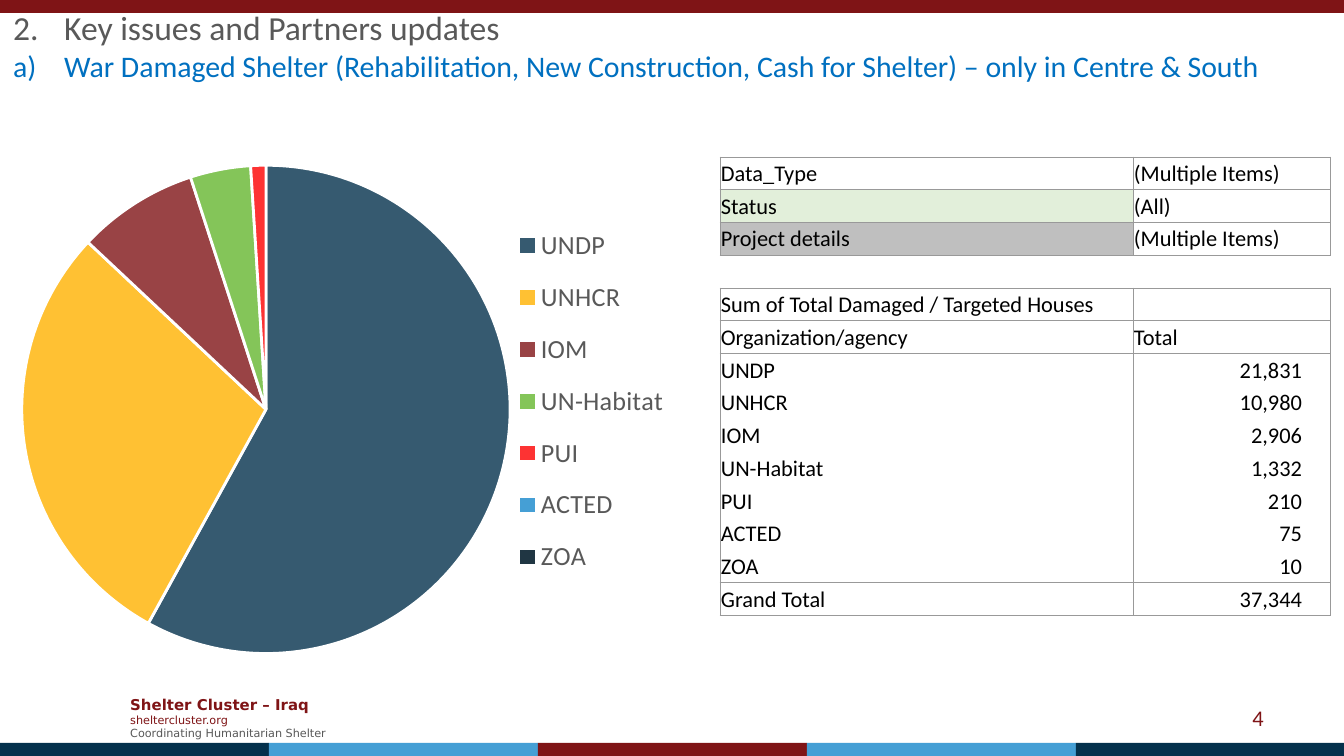
from lxml.etree import SubElement
from pptx import Presentation
from pptx.chart.data import CategoryChartData
from pptx.dml.color import RGBColor
from pptx.enum.chart import XL_CHART_TYPE as CT, XL_LEGEND_POSITION as LP
from pptx.enum.shapes import MSO_SHAPE as SHAPE
from pptx.enum.text import MSO_ANCHOR as ANCHOR, PP_ALIGN as ALIGN
from pptx.oxml import parse_xml
from pptx.oxml.ns import nsdecls, qn
from pptx.util import Pt

SCALE = 914400 / 134.4
MAROON, NAVY, SKY = "7F1416", "04314C", "459FD5"
GREY, BLUE, BLACK, WHITE, RULE = "595959", "0070C0", "000000", "FFFFFF", "999999"
NO_STYLE = "{2D5ABB26-0587-4C30-8999-92F81FD0307C}"
AGENCIES = ["UNDP", "UNHCR", "IOM", "UN-Habitat", "PUI", "ACTED", "ZOA"]
HOUSES = ["21,831", "10,980", "2,906", "1,332", "210", "75", "10"]
SHARES = [58, 29, 8, 4, 1, 0, 0]
SLICES = ["365A70", "FFC133", "994345", "84C559", "FD3333", SKY, "203643"]


def px(n):
    return round(n * SCALE)


def rgb(value):
    return RGBColor.from_string(value)


class Deck:
    """Holds the style and the current slide."""

    font = "Calibri"

    def __init__(self, width, height):
        self.prs = Presentation()
        self.prs.slide_width, self.prs.slide_height = px(width), px(height)
        self.s = self.prs.slides.add_slide(self.prs.slide_layouts[6])

    def style(self, font, size, color, name=None, bold=False):
        font.name, font.size, font.bold = name or self.font, Pt(size), bold
        font.color.rgb = rgb(color)

    def run(self, p, text, size, color, name=None, bold=False):
        r = p.add_run()
        r.text = text
        self.style(r.font, size, color, name, bold)

    def bar(self, x, y, w, h, color):
        sp = self.s.shapes.add_shape(SHAPE.RECTANGLE, px(x), px(y), px(w), px(h))
        sp.shadow.inherit = False
        sp.fill.solid()
        sp.fill.fore_color.rgb = rgb(color)
        sp.line.fill.background()

    def text(self, x, y, w, h, lines, align=ALIGN.LEFT, numbering=()):
        tf = self.s.shapes.add_textbox(px(x), px(y), px(w), px(h)).text_frame
        tf.word_wrap, tf.vertical_anchor = True, ANCHOR.MIDDLE
        for i, line in enumerate(lines):
            p = tf.add_paragraph() if i else tf.paragraphs[0]
            p.alignment = align
            if numbering:
                pPr = p._p.get_or_add_pPr()
                pPr.set("marL", str(px(51)))
                pPr.set("indent", str(-px(51)))
                kind, start = numbering[i]
                SubElement(pPr, qn("a:buFont"), typeface="+mj-lt")
                SubElement(pPr, qn("a:buAutoNum"), type=kind, startAt=str(start))
            self.run(p, *line)

    def place(self, following, x, y, w, h, target=""):
        parent = following.getparent()
        for old in parent.findall(qn("c:layout")):
            parent.remove(old)
        following.addprevious(parse_xml(
            f'<c:layout {nsdecls("c")}><c:manualLayout>{target}'
            '<c:xMode val="edge"/><c:yMode val="edge"/>'
            f'<c:x val="{x}"/><c:y val="{y}"/><c:w val="{w}"/><c:h val="{h}"/>'
            '</c:manualLayout></c:layout>'))

    def pie(self, x, y, w, h, names, values, colors):
        data = CategoryChartData()
        data.categories = names
        data.add_series("Series 1", values)
        chart = self.s.shapes.add_chart(CT.PIE, px(x), px(y), px(w), px(h), data).chart
        self.style(chart.font, 10, BLACK)
        chart.has_title, chart.has_legend = False, True
        legend = chart.legend
        legend.position, legend.include_in_layout = LP.RIGHT, False
        self.style(legend.font, 14, GREY)
        plot = chart.plots[0]
        plot.vary_by_categories = True
        for i, color in enumerate(colors):
            fmt = plot.series[0].points[i].format
            fmt.fill.solid()
            fmt.fill.fore_color.rgb = rgb(color)
            fmt.line.color.rgb, fmt.line.width = rgb(WHITE), Pt(1.5)
        self.place(plot._element, 0.03, 0.06, 0.7, 0.88, '<c:layoutTarget val="inner"/>')
        self.place(legend._element.find(qn("c:overlay")), 0.73, 0.14, 0.23, 0.69)

    def borders(self, cell, sides):
        tcPr = cell._tc.get_or_add_tcPr()
        for i, side in enumerate("LRTB"):
            ln = parse_xml(f'<a:ln{side} {nsdecls("a")} w="6350"/>')
            if side in sides:
                SubElement(SubElement(ln, qn("a:solidFill")), qn("a:srgbClr"), val=RULE)
            else:
                SubElement(ln, qn("a:noFill"))
            tcPr.insert(i, ln)

    def table(self, x, y, widths, h, rows, sides, fills):
        frame = self.s.shapes.add_table(len(rows), len(widths), px(x), px(y),
                                        px(sum(widths)), px(h))
        tbl = frame.table
        tbl.first_row = tbl.horz_banding = False
        tbl._tbl.tblPr.find(qn("a:tableStyleId")).text = NO_STYLE
        for col, width in zip(tbl.columns, widths):
            col.width = px(width)
        for i, row in enumerate(rows):
            for j, text in enumerate(row):
                cell = tbl.cell(i, j)
                number = text.replace(",", "").isdigit()
                cell.vertical_anchor = ANCHOR.MIDDLE
                cell.margin_left = cell.margin_top = px(1)
                cell.margin_right, cell.margin_bottom = px(28 if number else 1), 0
                p = cell.text_frame.paragraphs[0]
                p.alignment = ALIGN.RIGHT if number else ALIGN.LEFT
                if text:
                    self.run(p, text, 12, BLACK)
                else:
                    SubElement(p._p, qn("a:endParaRPr"), sz="1200")
                if (i, j) in fills:
                    cell.fill.solid()
                    cell.fill.fore_color.rgb = rgb(fills[i, j])
                else:
                    cell.fill.background()
                self.borders(cell, sides.get(i, "LRTB"))


def main():
    deck = Deck(1344, 756)
    deck.text(117, 688, 233, 59, [
        ("Shelter Cluster – Iraq", 8, MAROON, "DejaVu Sans", True),
        ("sheltercluster.org", 6, MAROON, "DejaVu Sans"),
        ("Coordinating Humanitarian Shelter", 6, GREY, "DejaVu Sans")])
    deck.bar(0, 0, 1344, 13, MAROON)
    for i, color in enumerate([NAVY, SKY, MAROON, SKY, NAVY]):
        deck.bar(i * 269, 743, 269, 13, color)
    deck.text(964, 698, 313, 40, [("4", 12, MAROON)], ALIGN.RIGHT)
    deck.text(0, 20, 1344, 50, [
        ("Key issues and Partners updates", 18, GREY),
        ("War Damaged Shelter (Rehabilitation, New Construction, Cash for Shelter)"
         " – only in Centre & South", 16, BLUE)],
        numbering=[("arabicPeriod", 2), ("alphaLcParenR", 1)])
    deck.pie(0, 132, 700, 555, AGENCIES, SHARES, SLICES)

    rows = [("Data_Type", "(Multiple Items)"), ("Status", "(All)"),
            ("Project details", "(Multiple Items)"), ("", ""),
            ("Sum of Total Damaged / Targeted Houses", ""),
            ("Organization/agency", "Total"),
            *zip(AGENCIES, HOUSES), ("Grand Total", "37,344")]
    sides = {3: "TB", 6: "LRT", **{i: "LR" for i in range(7, 12)}, 12: "LRB"}
    deck.table(720, 157, [413, 197], 459, rows, sides,
               {(1, 0): "E2EFDA", (2, 0): "BFBFBF"})
    deck.prs.save("out.pptx")


if __name__ == "__main__":
    main()
